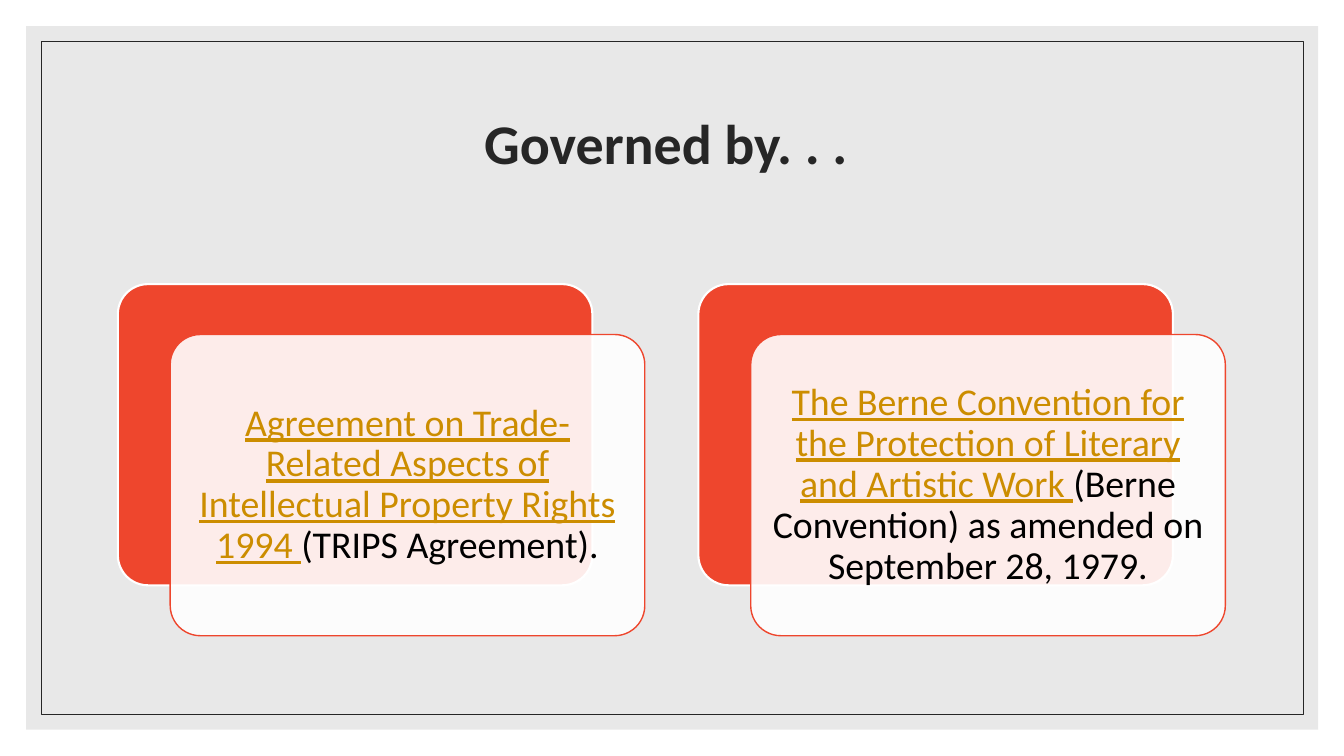
from dataclasses import dataclass

from lxml import etree
from pptx import Presentation
from pptx.dml.color import RGBColor
from pptx.enum.shapes import MSO_SHAPE
from pptx.enum.text import MSO_ANCHOR, MSO_AUTO_SIZE, PP_ALIGN
from pptx.oxml.ns import qn
from pptx.util import Cm, Pt

RECTANGLE = MSO_SHAPE.RECTANGLE
ROUNDED = MSO_SHAPE.ROUNDED_RECTANGLE
MIDDLE = MSO_ANCHOR.MIDDLE
CENTER = PP_ALIGN.CENTER
NO_AUTOFIT = MSO_AUTO_SIZE.NONE

COLORS = {
    "white": "FFFFFF",
    "panel": "D9D9D9",
    "ink": "262626",
    "accent": "EE462D",
    "treaty": "CC8D00",
    "body": "000000",
}
FONT = "Calibri"
SLIDE_WIDTH, SLIDE_HEIGHT = 33.87, 19.05

CARD_LEFT, CARD_TOP = 2.97, 7.16
CARD_WIDTH, CARD_HEIGHT = 11.96, 7.59
CARD_PITCH = 14.63
FRONT_SHIFT_X, FRONT_SHIFT_Y = 1.32, 1.27
CARD_INSET = 0.28


@dataclass
class Box:
    left: float
    top: float
    width: float
    height: float


@dataclass
class Style:
    fill: str | None = None
    opacity: int = 100
    line: str | None = None
    line_width: float = 1


@dataclass
class Treaty:
    name: str
    detail: str


FRAMES = [
    (Box(0, 0, SLIDE_WIDTH, SLIDE_HEIGHT), Style("white")),
    (Box(0.66, 0.66, 32.56, 17.73), Style("panel", opacity=60)),
    (Box(1.04, 1.04, 31.8, 16.97), Style(line="ink", line_width=0.5)),
]
BACK_STYLE = Style("accent", line="white", line_width=1.5)
FRONT_STYLE = Style("white", opacity=90, line="accent")

TREATIES = [
    Treaty(
        "Agreement on Trade-Related Aspects of Intellectual Property Rights 1994 ",
        "(TRIPS Agreement).",
    ),
    Treaty(
        "The Berne Convention for the Protection of Literary and Artistic Work ",
        "(Berne Convention) as amended on September 28, 1979.",
    ),
]


def rgb(name: str) -> RGBColor:
    return RGBColor.from_string(COLORS[name])


def add_panel(slide, kind, box: Box, style: Style):
    panel = slide.shapes.add_shape(
        kind, Cm(box.left), Cm(box.top), Cm(box.width), Cm(box.height)
    )
    panel.shadow.inherit = False
    if kind == ROUNDED:
        panel.adjustments[0] = 0.1
    if style.fill:
        panel.fill.solid()
        panel.fill.fore_color.rgb = rgb(style.fill)
        if style.opacity < 100:
            color = panel.element.spPr.find(qn("a:solidFill")).find(qn("a:srgbClr"))
            etree.SubElement(color, qn("a:alpha"), val=str(style.opacity * 1000))
    else:
        panel.fill.background()
    if style.line:
        panel.line.color.rgb = rgb(style.line)
        panel.line.width = Pt(style.line_width)
    else:
        panel.line.fill.background()
    return panel


def format_run(run, size: float, color: str, bold=False, underline=False) -> None:
    run.font.name = FONT
    run.font.size = Pt(size)
    run.font.color.rgb = rgb(color)
    run.font.bold = bold
    run.font.underline = underline


def format_centered(frame) -> None:
    frame.word_wrap = True
    frame.auto_size = NO_AUTOFIT
    frame.vertical_anchor = MIDDLE
    frame.paragraphs[0].alignment = CENTER
    frame.paragraphs[0].line_spacing = 0.9


def place_title(slide, text: str) -> None:
    """Fill the title placeholder and lift it above the frames."""
    title = slide.shapes.title
    title.left, title.top = Cm(2.97), Cm(1.78)
    title.width, title.height = Cm(27.94), Cm(3.81)
    title.text_frame.text = text
    format_centered(title.text_frame)
    format_run(title.text_frame.paragraphs[0].runs[0], 40, "ink", bold=True)
    title.element.getparent().append(title.element)


def add_treaty_card(slide, left: float, treaty: Treaty) -> None:
    back = Box(left, CARD_TOP, CARD_WIDTH, CARD_HEIGHT)
    front = Box(left + FRONT_SHIFT_X, CARD_TOP + FRONT_SHIFT_Y, CARD_WIDTH, CARD_HEIGHT)
    add_panel(slide, ROUNDED, back, BACK_STYLE)
    frame = add_panel(slide, ROUNDED, front, FRONT_STYLE).text_frame
    frame.margin_left = frame.margin_right = Cm(CARD_INSET)
    frame.margin_top = frame.margin_bottom = Cm(CARD_INSET)
    format_centered(frame)
    paragraph = frame.paragraphs[0]
    paragraph.text = treaty.name
    format_run(paragraph.runs[0], 27, "treaty", underline=True)
    detail = paragraph.add_run()
    detail.text = treaty.detail
    format_run(detail, 27, "body")


def main() -> None:
    presentation = Presentation()
    presentation.slide_width = Cm(SLIDE_WIDTH)
    presentation.slide_height = Cm(SLIDE_HEIGHT)
    slide = presentation.slides.add_slide(presentation.slide_layouts[5])
    for box, style in FRAMES:
        add_panel(slide, RECTANGLE, box, style)
    place_title(slide, "Governed by. . . ")
    for column, treaty in enumerate(TREATIES):
        add_treaty_card(slide, CARD_LEFT + column * CARD_PITCH, treaty)
    presentation.save("out.pptx")


if __name__ == "__main__":
    main()
